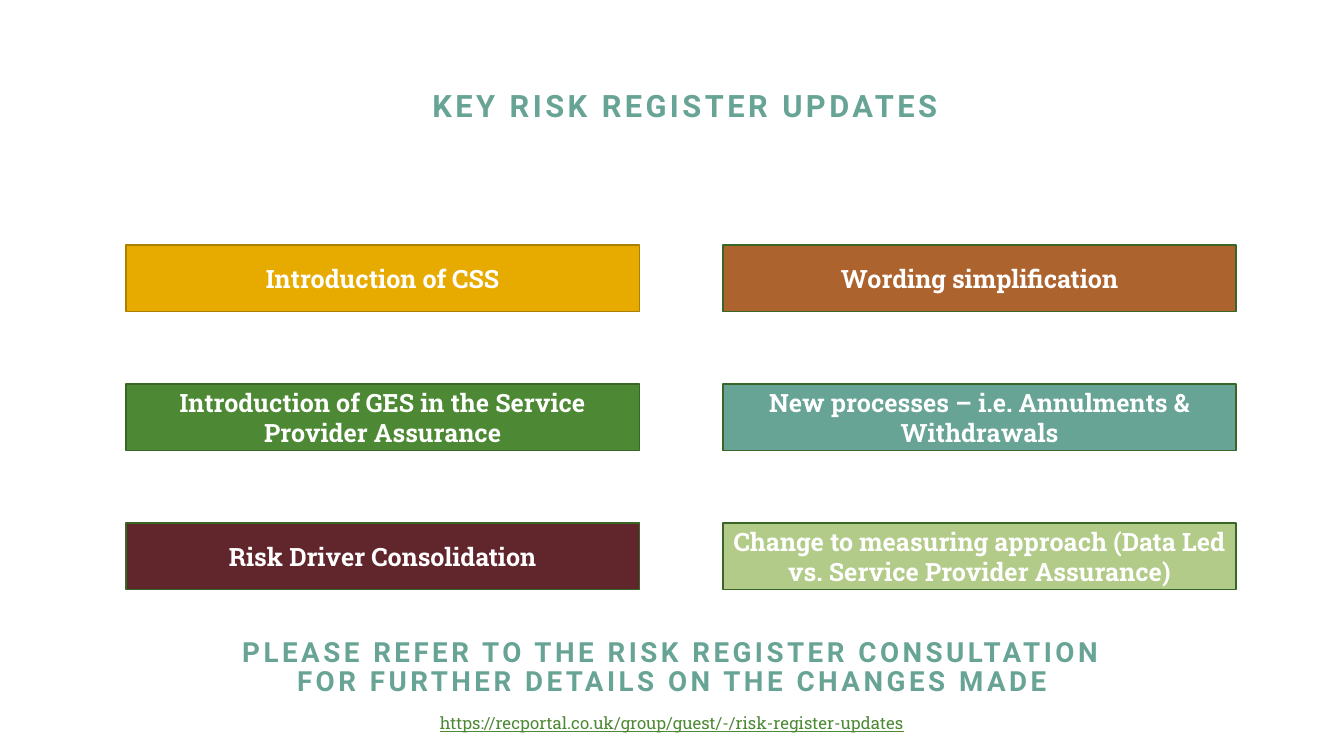
from pptx import Presentation
from pptx import util as u
from pptx.dml.color import RGBColor
from pptx.enum import shapes, text

TEAL = RGBColor(0x68, 0xA4, 0x95)
GOLD = RGBColor(0xE7, 0xAB, 0x00)
OCHRE = RGBColor(0xAB, 0x7F, 0x00)
RUST = RGBColor(0xAD, 0x63, 0x2E)
GREEN = RGBColor(0x4D, 0x89, 0x34)
FOREST = RGBColor(0x39, 0x65, 0x26)
WINE = RGBColor(0x61, 0x25, 0x2C)
LIME = RGBColor(0xB3, 0xCB, 0x89)
WHITE = RGBColor(0xFF, 0xFF, 0xFF)

HEAD, BODY = "Roboto", "Roboto Slab"

TILES = [
    [("Introduction of CSS", GOLD, OCHRE),
     ("Wording simplification", RUST, FOREST)],
    [("Introduction of GES in the Service Provider Assurance", GREEN, FOREST),
     ("New processes – i.e. Annulments & Withdrawals", TEAL, FOREST)],
    [("Risk Driver Consolidation", WINE, FOREST),
     ("Change to measuring approach (Data Led vs. Service Provider Assurance)",
      LIME, FOREST)],
]


def write(shape, words, size, color, font=BODY, bold=False, under=None,
          track=None, lead=None, anchor=text.MSO_ANCHOR.TOP):
    """Fill a shape with one centred paragraph; track is letter spacing in points."""
    frame = shape.text_frame
    frame.word_wrap = True
    frame.auto_size = text.MSO_AUTO_SIZE.NONE
    frame.vertical_anchor = anchor
    para = frame.paragraphs[0]
    para.alignment = text.PP_ALIGN.CENTER
    if lead:
        para.line_spacing = lead
    run = para.add_run()
    run.text = words
    face = run.font
    face.name, face.size, face.bold = font, u.Pt(size), bold
    face.underline = under
    face.color.rgb = color
    if track:
        run._r.get_or_add_rPr().set("spc", str(round(track * 100)))


class Deck:
    head = dict(color=TEAL, font=HEAD, bold=True, track=2.5, lead=0.9)

    def __init__(self):
        self.prs = Presentation()
        self.prs.slide_width = u.Inches(13.33)
        self.prs.slide_height = u.Inches(7.5)
        self.slide = self.prs.slides.add_slide(self.prs.slide_layouts[5])

    def title(self, words, left, top, width, height, size):
        shape = self.slide.shapes.title
        shape.left, shape.top = u.Inches(left), u.Inches(top)
        shape.width, shape.height = u.Inches(width), u.Inches(height)
        write(shape, words, size, **self.head)

    def label(self, words, left, top, width, height, size, **style):
        box = self.slide.shapes.add_textbox(
            u.Inches(left), u.Inches(top), u.Inches(width), u.Inches(height))
        write(box, words, size, **style)

    def tile(self, words, left, top, fill, edge):
        box = self.slide.shapes.add_shape(
            shapes.MSO_SHAPE.RECTANGLE, u.Inches(left), u.Inches(top),
            u.Inches(5.09), u.Inches(0.66))
        box.shadow.inherit = False
        box.fill.solid()
        box.fill.fore_color.rgb = fill
        box.line.color.rgb = edge
        box.line.width = u.Pt(1)
        write(box, words, 18, WHITE, bold=True, anchor=text.MSO_ANCHOR.MIDDLE)


def main():
    deck = Deck()
    deck.label("KEY RISK REGISTER UPDATES", 3.53, 0.85, 6.53, 0.74, 22, **deck.head)
    for row, pair in enumerate(TILES):
        for col, (words, fill, edge) in enumerate(pair):
            deck.tile(words, 1.25 + 5.92 * col, 2.43 + 1.38 * row, fill, edge)
    deck.title("PLEASE REFER TO THE RISK REGISTER CONSULTATION "
               "FOR FURTHER DETAILS ON THE CHANGES MADE",
               2.18, 6.28, 8.97, 0.74, 19.8)
    deck.label("https://recportal.co.uk/group/guest/-/risk-register-updates",
               3.74, 7.02, 5.85, 0.61, 12, color=GREEN, under=True)
    deck.prs.save("out.pptx")


if __name__ == "__main__":
    main()
